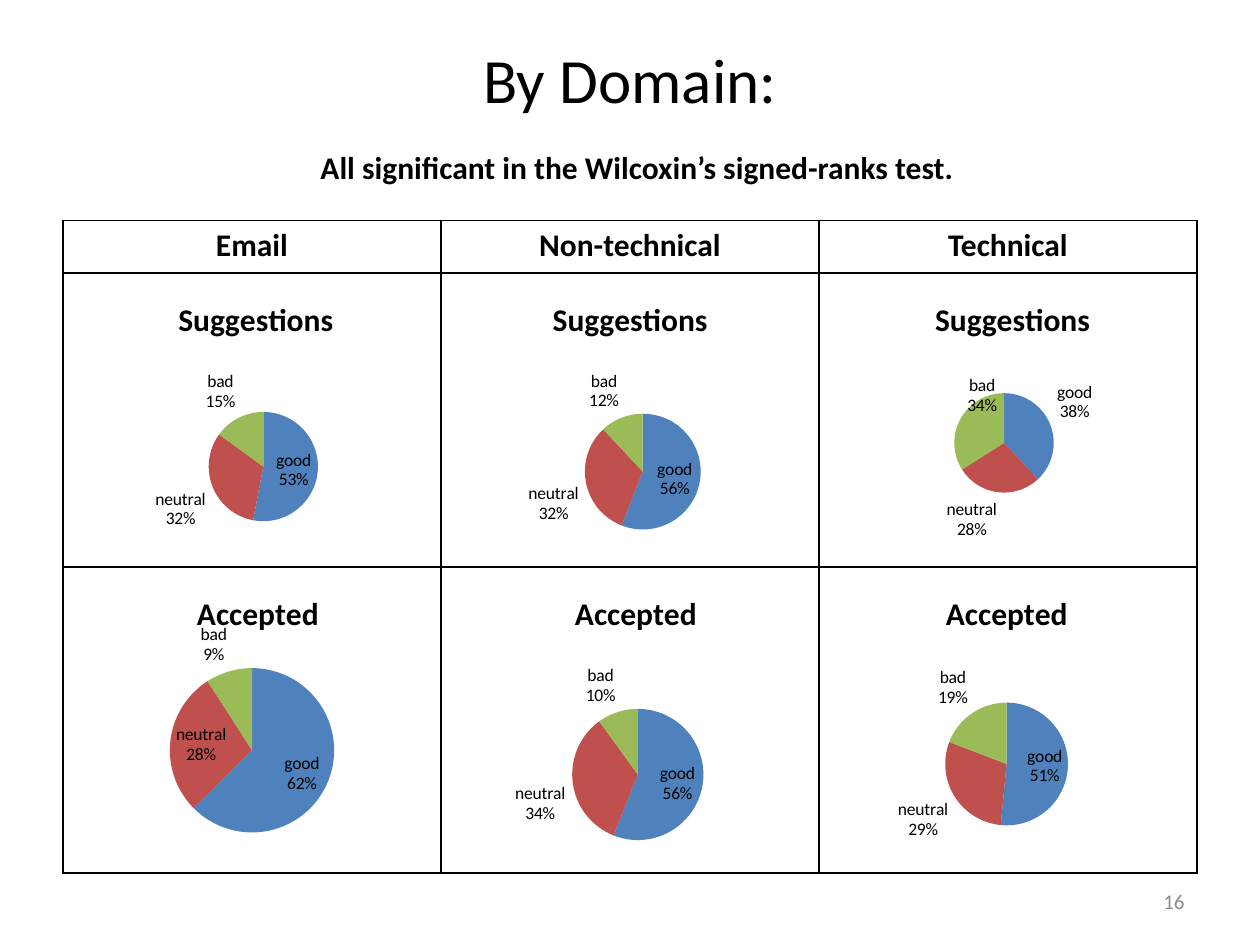
from dataclasses import dataclass
from typing import Optional

from lxml import etree
from pptx import Presentation
from pptx.chart.data import CategoryChartData
from pptx.dml.color import RGBColor
from pptx.enum.chart import XL_CHART_TYPE, XL_LABEL_POSITION
from pptx.enum.text import MSO_ANCHOR, PP_ALIGN
from pptx.oxml import parse_xml
from pptx.oxml.ns import nsdecls, qn
from pptx.util import Pt

PIE = XL_CHART_TYPE.PIE
BEST_FIT = XL_LABEL_POSITION.BEST_FIT
MIDDLE = MSO_ANCHOR.MIDDLE
CENTER, RIGHT = PP_ALIGN.CENTER, PP_ALIGN.RIGHT

BLACK = RGBColor(0x00, 0x00, 0x00)
WHITE = RGBColor(0xFF, 0xFF, 0xFF)
GRAY = RGBColor(0x8C, 0x8C, 0x8C)
BLUE = RGBColor(0x4F, 0x81, 0xBD)
RED = RGBColor(0xC0, 0x50, 0x4D)
GREEN = RGBColor(0x9B, 0xBB, 0x59)

FONT = "Calibri"
RATINGS = {"good": BLUE, "neutral": RED, "bad": GREEN}
DOMAINS = ["Email", "Non-technical", "Technical"]
COLUMN_WIDTH = 216
ROW_HEIGHTS = [30, 168, 175]
SUGGESTIONS_TOP, ACCEPTED_TOP = 162, 330
TITLE_Y = 0.03


@dataclass
class Pie:
    """One chart; title_x, plot and bad_shift are fractions of its size."""
    title: str
    title_x: float
    left: float
    top: float
    width: float
    height: float
    values: tuple[int, int, int]
    plot: Optional[tuple[float, float, float, float]] = None
    bad_shift: Optional[tuple[float, float]] = None


PIES = [
    Pie("Suggestions", 0.27, 42, SUGGESTIONS_TOP, 210, 156, (53, 32, 15)),
    Pie("Accepted", 0.33, 42, ACCEPTED_TOP, 204, 162, (62, 28, 9),
        plot=(0.12, 0.32, 0.76, 0.58)),
    Pie("Suggestions", 0.26, 258, SUGGESTIONS_TOP, 210, 156, (56, 32, 12)),
    Pie("Accepted", 0.33, 258, ACCEPTED_TOP, 204, 164, (56, 34, 10)),
    Pie("Suggestions", 0.28, 474, SUGGESTIONS_TOP, 204, 156, (38, 28, 34),
        bad_shift=(0.12, 0)),
    Pie("Accepted", 0.33, 468, ACCEPTED_TOP, 210, 165, (51, 29, 19)),
]


def add_run(p, text: str, size: float, bold: bool = False,
            color: RGBColor = BLACK) -> None:
    r = p.add_run()
    r.text = text
    r.font.name, r.font.size, r.font.bold = FONT, Pt(size), bold
    r.font.color.rgb = color


def add_text_box(slide, left: float, top: float, width: float, height: float,
                 align: PP_ALIGN):
    """Add a middle-anchored text box and return its first paragraph."""
    sp = slide.shapes.add_textbox(Pt(left), Pt(top), Pt(width), Pt(height))
    tf = sp.text_frame
    tf.word_wrap = True
    tf.vertical_anchor = MIDDLE
    p = tf.paragraphs[0]
    p.alignment = align
    return p


def set_borders(cell) -> None:
    """Draw a 1 pt black line on every side of a cell."""
    tcPr = cell._tc.get_or_add_tcPr()
    for i, side in enumerate(("lnL", "lnR", "lnT", "lnB")):
        tcPr.insert(i, parse_xml(
            f'<a:{side} {nsdecls("a")} w="{Pt(1)}"><a:solidFill>'
            f'<a:srgbClr val="{BLACK}"/></a:solidFill></a:{side}>'))


def add_domain_table(slide) -> None:
    table = slide.shapes.add_table(
        len(ROW_HEIGHTS), len(DOMAINS), Pt(36), Pt(126),
        Pt(COLUMN_WIDTH * len(DOMAINS)), Pt(sum(ROW_HEIGHTS))).table
    table.first_row = table.horz_banding = False
    for column in table.columns:
        column.width = Pt(COLUMN_WIDTH)
    for row, height in zip(table.rows, ROW_HEIGHTS):
        row.height = Pt(height)
    for cell in table.iter_cells():
        cell.fill.background()
        set_borders(cell)
    for cell, domain in zip(table.rows[0].cells, DOMAINS):
        cell.fill.solid()
        cell.fill.fore_color.rgb = WHITE
        p = cell.text_frame.paragraphs[0]
        p.alignment = CENTER
        add_run(p, domain, 18, bold=True)


def set_layout(parent, index: int, **settings) -> None:
    """Give a chart element a manual layout as its child at index."""
    for layout in parent.findall(qn("c:layout")):
        parent.remove(layout)
    items = "".join(f'<c:{k} val="{v}"/>' for k, v in settings.items())
    parent.insert(index, parse_xml(
        f'<c:layout {nsdecls("c")}><c:manualLayout>{items}'
        '</c:manualLayout></c:layout>'))


def format_labels(series, pie: Pie) -> None:
    """Label slices with rating and share, one above the other."""
    labels = series.data_labels
    adds_up = sum(pie.values) == 100
    labels.show_category_name = True
    labels.show_percentage = adds_up
    labels.show_value = not adds_up
    labels.number_format = "0%" if adds_up else '0"%"'
    labels.number_format_is_linked = False
    labels.position = BEST_FIT
    dLbls = labels._element
    separator = etree.Element(qn("c:separator"))
    separator.text = "\n"
    dLbls.find(qn("c:showBubbleSize")).addnext(separator)
    if pie.bad_shift:
        x, y = pie.bad_shift
        dLbl = parse_xml(
            f'<c:dLbl {nsdecls("c")}><c:idx val="2"/>'
            '<c:dLblPos val="bestFit"/><c:showLegendKey val="0"/>'
            '<c:showVal val="0"/><c:showCatName val="1"/>'
            '<c:showSerName val="0"/><c:showPercent val="1"/>'
            '<c:showBubbleSize val="0"/>'
            '<c:separator>\n</c:separator></c:dLbl>')
        set_layout(dLbl, 1, x=x, y=y)
        dLbls.insert(0, dLbl)


def add_pie(slide, pie: Pie) -> None:
    data = CategoryChartData()
    data.categories = list(RATINGS)
    data.add_series("Series 1", pie.values)
    chart = slide.shapes.add_chart(
        PIE, Pt(pie.left), Pt(pie.top), Pt(pie.width), Pt(pie.height),
        data).chart
    chart.has_legend = False
    chart.font.name, chart.font.size = FONT, Pt(10)
    chart.font.color.rgb = BLACK
    chart.has_title = True
    title = chart.chart_title
    add_run(title.text_frame.paragraphs[0], pie.title, 18, bold=True)
    title.include_in_layout = False
    set_layout(title._element, 1, xMode="edge", yMode="edge",
               x=pie.title_x, y=TITLE_Y)

    plot = chart.plots[0]
    plot.vary_by_categories = True
    series = plot.series[0]
    for i, color in enumerate(RATINGS.values()):
        fill = series.points[i].format.fill
        fill.solid()
        fill.fore_color.rgb = color
    format_labels(series, pie)
    if pie.plot:
        x, y, w, h = pie.plot
        area = chart._chartSpace.find(".//" + qn("c:plotArea"))
        set_layout(area, 0, layoutTarget="inner", xMode="edge", yMode="edge",
                   x=x, y=y, w=w, h=h)


def main() -> None:
    prs = Presentation()
    prs.slide_width, prs.slide_height = Pt(720), Pt(540)
    slide = prs.slides.add_slide(prs.slide_layouts[6])

    p = add_text_box(slide, 36, 21.6, 648, 90, CENTER)
    add_run(p, "By Domain:", 36)
    p.add_line_break()
    add_run(p, " ", 36)
    add_run(p, "All significant in the Wilcoxin’s signed-ranks test.", 18, bold=True)

    add_domain_table(slide)
    p = add_text_box(slide, 516, 500.5, 168, 28.75, RIGHT)
    add_run(p, "16", 12, color=GRAY)
    for pie in PIES:
        add_pie(slide, pie)
    prs.save("out.pptx")


if __name__ == "__main__":
    main()
